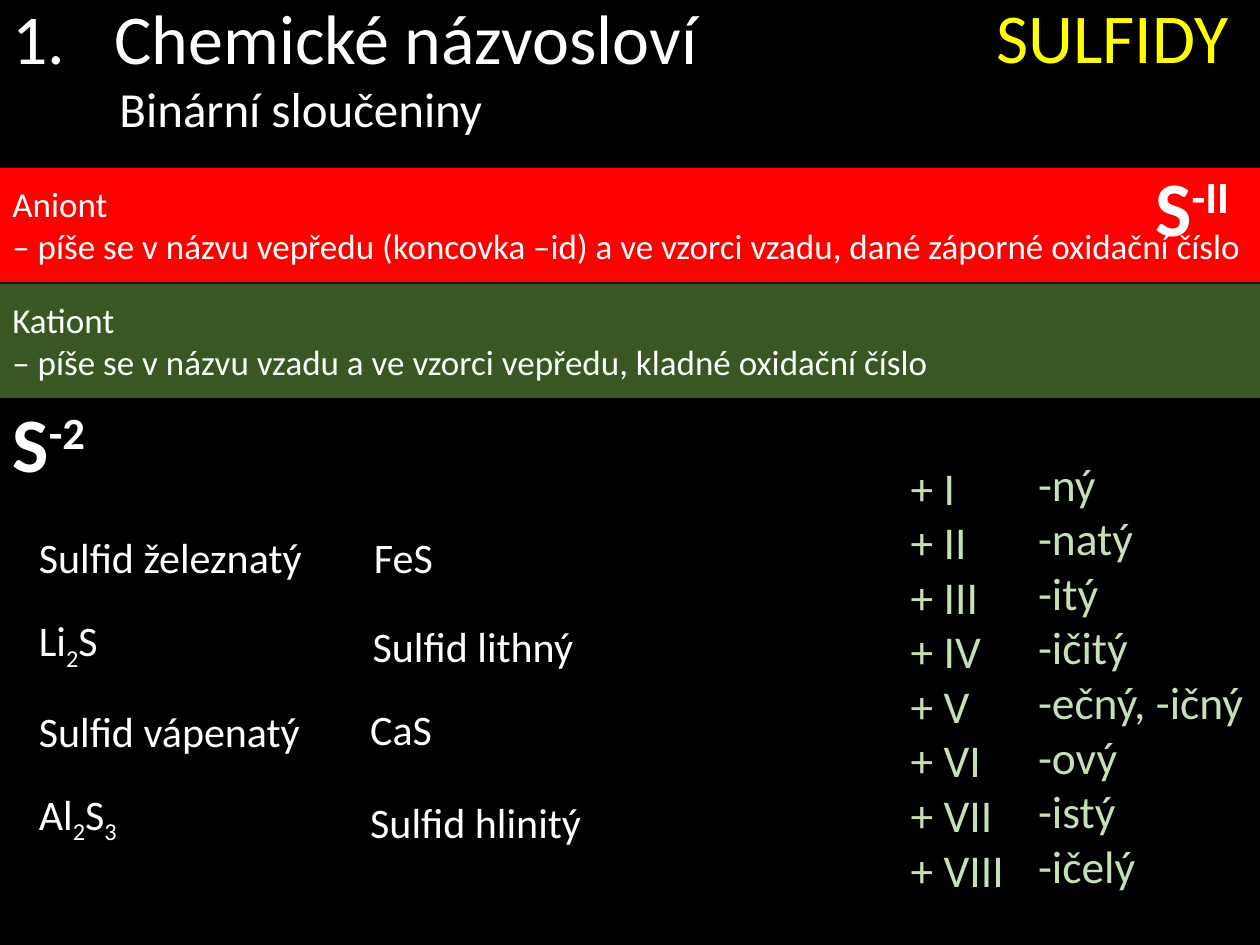
from dataclasses import dataclass

from lxml import etree
from pptx import Presentation
from pptx.dml.color import RGBColor
from pptx.enum import shapes, text
from pptx.oxml import ns
from pptx.util import Inches, Pt


@dataclass(frozen=True)
class Theme:
    """Colours, font and type sizes of the slide."""
    font: str = "Calibri"
    black: str = "000000"
    white: str = "FFFFFF"
    yellow: str = "FFFF00"
    red: str = "FF0000"
    green: str = "385723"
    pale_green: str = "C5E0B4"
    title: int = 40
    subtitle: int = 28
    band: int = 20
    ion: int = 44
    example: int = 24
    suffix: int = 26


THEME = Theme()


def add_run(p, words, size, color, bold=False, baseline=0):
    """Add one formatted run, raised or lowered by baseline percent."""
    r = p.add_run()
    r.text = words
    r.font.name = THEME.font
    r.font.size = Pt(size)
    r.font.bold = bold
    r.font.color.rgb = RGBColor.from_string(color)
    if baseline:
        r._r.get_or_add_rPr().set("baseline", str(baseline * 1000))


def set_frame(sp):
    """Centre the text vertically and let it wrap."""
    tf = sp.text_frame
    tf.word_wrap = True
    tf.vertical_anchor = text.MSO_ANCHOR.MIDDLE
    return tf


def add_box(s, at, fill):
    """Add a plain filled rectangle and return its text frame."""
    sp = s.shapes.add_shape(shapes.MSO_SHAPE.RECTANGLE, *map(Inches, at))
    sp.shadow.inherit = False
    sp.fill.solid()
    sp.fill.fore_color.rgb = RGBColor.from_string(fill)
    sp.line.fill.background()
    return set_frame(sp)


def add_text(s, at):
    """Add an unfilled text box and return its text frame."""
    return set_frame(s.shapes.add_textbox(*map(Inches, at)))


def next_paragraph(tf, first):
    """Return a left-aligned paragraph, reusing the first one."""
    p = tf.paragraphs[0] if first else tf.add_paragraph()
    p.alignment = text.PP_ALIGN.LEFT
    return p


def add_lines(s, at, lines, size, color, fill):
    """Add a rectangle holding one paragraph per line."""
    tf = add_box(s, at, fill)
    for i, line in enumerate(lines):
        add_run(next_paragraph(tf, i == 0), line, size, color)


def add_title(s):
    """Add the numbered title, its subtitle and the topic."""
    tf = add_box(s, (0, 0, 10, 1.65), THEME.black)
    tf.margin_top, tf.margin_bottom = 0, Inches(0.6)
    p = next_paragraph(tf, True)
    add_run(p, "Chemické názvosloví", THEME.title, THEME.white)
    pPr = p._p.get_or_add_pPr()
    pPr.set("marL", str(Inches(0.81)))
    pPr.set("indent", str(-Inches(0.81)))
    etree.SubElement(pPr, ns.qn("a:buFont"), typeface="+mj-lt")
    etree.SubElement(pPr, ns.qn("a:buAutoNum"), type="arabicPeriod")
    p = next_paragraph(tf, False)
    p._p.get_or_add_pPr().set("marL", str(Inches(0.85)))
    add_run(p, "Binární sloučeniny", THEME.subtitle, THEME.white)
    tf = add_text(s, (7.81, 0, 2.19, 0.57))
    tf.margin_top = tf.margin_bottom = 0
    add_run(next_paragraph(tf, True), "SULFIDY", THEME.title, THEME.yellow)


def add_ion(s, at, charge):
    """Add the sulfide symbol with a raised charge."""
    p = next_paragraph(add_text(s, at), True)
    add_run(p, "S", THEME.ion, THEME.white, True)
    add_run(p, charge, THEME.ion, THEME.white, True, 30)


def add_example(s, at, parts):
    """Add a name or formula whose digit parts are subscripts."""
    p = next_paragraph(add_box(s, at, THEME.black), True)
    for part in parts:
        add_run(p, part, THEME.example, THEME.white,
                baseline=-25 if part.isdigit() else 0)


def main():
    """Build and save the slide."""
    prs = Presentation()
    prs.slide_width, prs.slide_height = Inches(10), Inches(7.5)
    s = prs.slides.add_slide(prs.slide_layouts[6])
    s.background.fill.solid()
    s.background.fill.fore_color.rgb = RGBColor.from_string(THEME.black)

    add_title(s)
    bands = [
        (1.33, THEME.red, "Aniont", "– píše se v názvu vepředu (koncovka –id) "
         "a ve vzorci vzadu, dané záporné oxidační číslo"),
        (2.25, THEME.green, "Kationt", "– píše se v názvu vzadu "
         "a ve vzorci vepředu, kladné oxidační číslo"),
    ]
    for top, fill, *lines in bands:
        add_lines(s, (0, top, 10.06, 0.91), lines, THEME.band, THEME.white, fill)

    numerals = ["I", "II", "III", "IV", "V", "VI", "VII", "VIII"]
    endings = ["-ný", "-natý", "-itý", "-ičitý", "-ečný, -ičný", "-ový",
               "-istý", "-ičelý"]
    for at, lines in [((7.13, 3.61, 1.43, 3.54), [f"+ {n}" for n in numerals]),
                      ((8.14, 3.58, 1.86, 3.54), endings)]:
        add_lines(s, at, lines, THEME.suffix, THEME.pale_green, THEME.black)

    add_ion(s, (9.07, 1.14, 1.65, 0.98), "-II")
    add_ion(s, (0, 3.05, 1.08, 0.91), "-2")

    tasks = [["Sulfid železnatý"], ["Li", "2", "S"], ["Sulfid vápenatý"],
             ["Al", "2", "S", "3"]]
    for i, parts in enumerate(tasks):
        add_example(s, (0.21, 4.07 + 0.69 * i, 3.71, 0.69), parts)
    answers = [(2.87, 4.07, "FeS"), (2.86, 4.78, "Sulfid lithný"),
               (2.84, 5.44, "CaS"), (2.84, 6.18, "Sulfid hlinitý")]
    for left, top, answer in answers:
        add_example(s, (left, top, 2.1, 0.69), [answer])

    prs.save("out.pptx")


if __name__ == "__main__":
    main()
